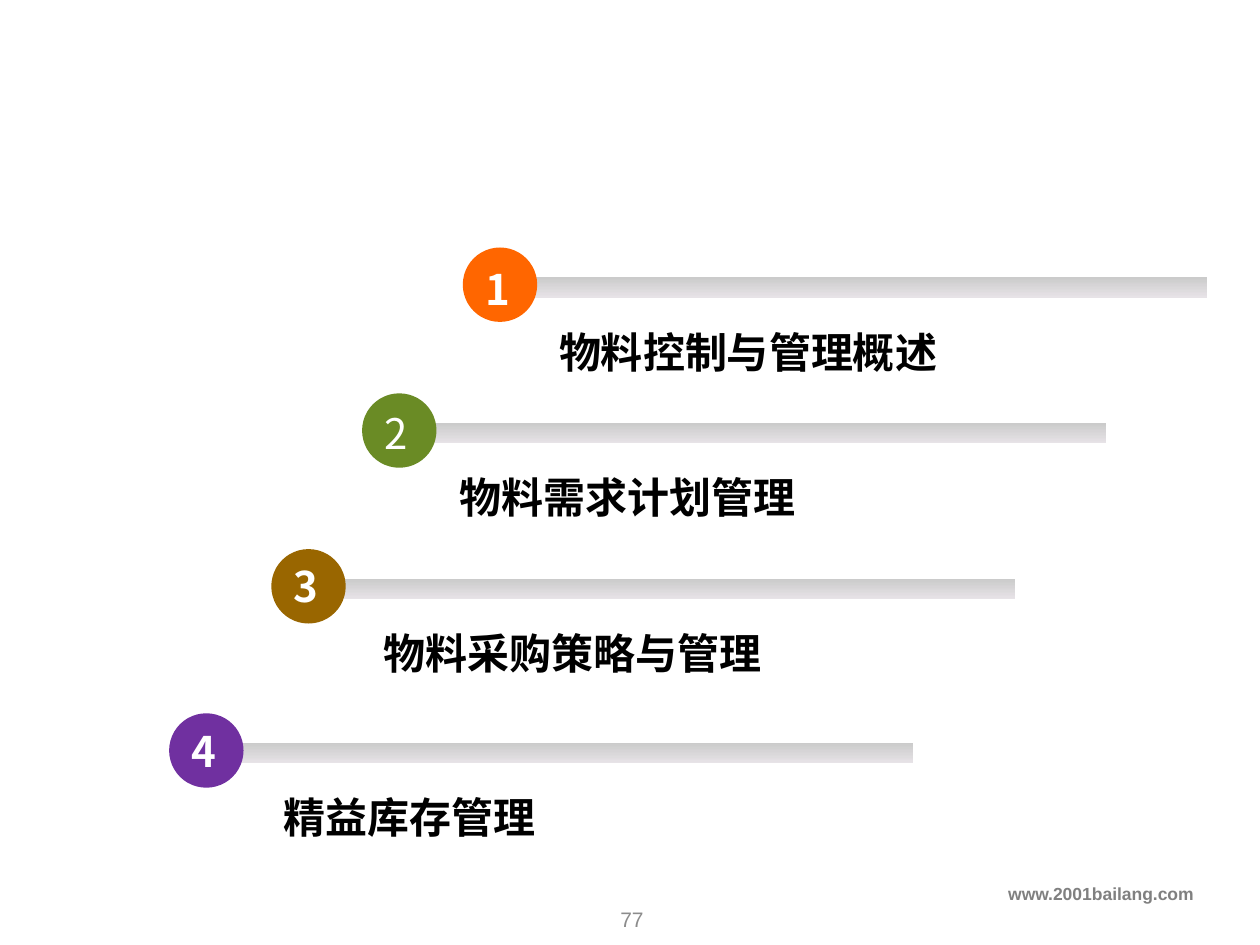
from lxml.etree import SubElement
from pptx import Presentation
from pptx.dml.color import RGBColor
from pptx.enum.shapes import MSO_SHAPE as Shape
from pptx.enum.text import MSO_ANCHOR as Anchor, MSO_AUTO_SIZE as AutoSize, PP_ALIGN as Align
from pptx.oxml.ns import qn
from pptx.util import Cm, Pt

WHITE = RGBColor(0xFF, 0xFF, 0xFF)
BLACK = RGBColor(0x00, 0x00, 0x00)
ORANGE = RGBColor(0xFF, 0x66, 0x00)
GREEN = RGBColor(0x6A, 0x8B, 0x25)
BROWN = RGBColor(0x99, 0x66, 0x00)
PURPLE = RGBColor(0x70, 0x30, 0xA0)
BAR_TOP = RGBColor(0xCB, 0xCB, 0xCB)
BAR_BOTTOM = RGBColor(0xE7, 0xE3, 0xE7)
FOOTER_GRAY = RGBColor(0x80, 0x80, 0x80)
PAGE_GRAY = RGBColor(0x8C, 0x8C, 0x8C)


class AgendaSlide:
    """Holds the agenda style and draws its elements on one slide."""

    heading_font = "Noto Sans CJK SC"
    footer_font = "Arial"
    heading_size = 24

    def __init__(self, slide):
        self.slide = slide

    def shape(self, kind, left, top, width, height):
        shape = self.slide.shapes.add_shape(kind, Cm(left), Cm(top), Cm(width), Cm(height))
        shape.shadow.inherit = False
        shape.line.fill.background()
        return shape

    def bar(self, left, top):
        fill = self.shape(Shape.RECTANGLE, left, top, 14.6, 0.41).fill
        fill.gradient()
        fill.gradient_angle = 270
        for stop, position, color in zip(fill.gradient_stops, (0, 1), (BAR_TOP, BAR_BOTTOM)):
            stop.position = position
            stop.color.rgb = color

    def circle(self, left, top, color):
        fill = self.shape(Shape.OVAL, left, top, 1.5, 1.5).fill
        fill.solid()
        fill.fore_color.rgb = color

    def text(self, words, left, top, width, height, font, size, color, bold=False, align=Align.LEFT):
        box = self.slide.shapes.add_textbox(Cm(left), Cm(top), Cm(width), Cm(height))
        box.text_frame.word_wrap = True
        paragraph = box.text_frame.paragraphs[0]
        paragraph.alignment = align
        run = paragraph.add_run()
        run.text = words
        run.font.name = font
        run.font.size = Pt(size)
        run.font.bold = bold
        run.font.color.rgb = color
        SubElement(run._r.get_or_add_rPr(), qn("a:ea")).set("typeface", font)
        return box.text_frame

    def heading(self, words, left, top, width, color, bold=True):
        frame = self.text(words, left, top, width, 1.27, self.heading_font, self.heading_size, color, bold)
        frame.auto_size = AutoSize.SHAPE_TO_FIT_TEXT
        return frame

    def topic(self, number, title, color, left, top, number_top, title_left, bold=True):
        self.bar(left, top)
        self.circle(left - 0.4, top - 0.6, color)
        self.heading(str(number), left - 0.2, number_top, 0.95, WHITE, bold)
        frame = self.heading(title, title_left, top + 0.86, 12.4, BLACK)
        properties = frame.paragraphs[0]._p.get_or_add_pPr()
        properties.set("marL", str(Cm(1.27)))
        properties.set("indent", str(-Cm(1.27)))

    def footer(self, address, page):
        self.text(address, 0, 17.68, 24.31, 0.89, self.footer_font, 10, FOOTER_GRAY, True, Align.RIGHT)
        frame = self.text(page, 9.88, 18.01, 5.72, 1.02, self.footer_font, 12, PAGE_GRAY, align=Align.CENTER)
        frame.vertical_anchor = Anchor.MIDDLE


def main():
    presentation = Presentation()
    presentation.slide_width = Cm(25.4)
    presentation.slide_height = Cm(19.05)
    agenda = AgendaSlide(presentation.slides.add_slide(presentation.slide_layouts[6]))
    agenda.topic(1, "物料控制与管理概述", ORANGE, 9.73, 5.59, 5.18, 11.02)
    agenda.topic(2, "物料需求计划管理", GREEN, 7.7, 8.53, 8.1, 9.02, bold=False)
    agenda.topic(3, "物料采购策略与管理", BROWN, 5.87, 11.67, 11.18, 7.49)
    agenda.topic(4, "精益库存管理", PURPLE, 3.81, 14.98, 14.5, 5.46)
    agenda.footer("www.2001bailang.com", "77")
    presentation.save("out.pptx")


if __name__ == "__main__":
    main()
